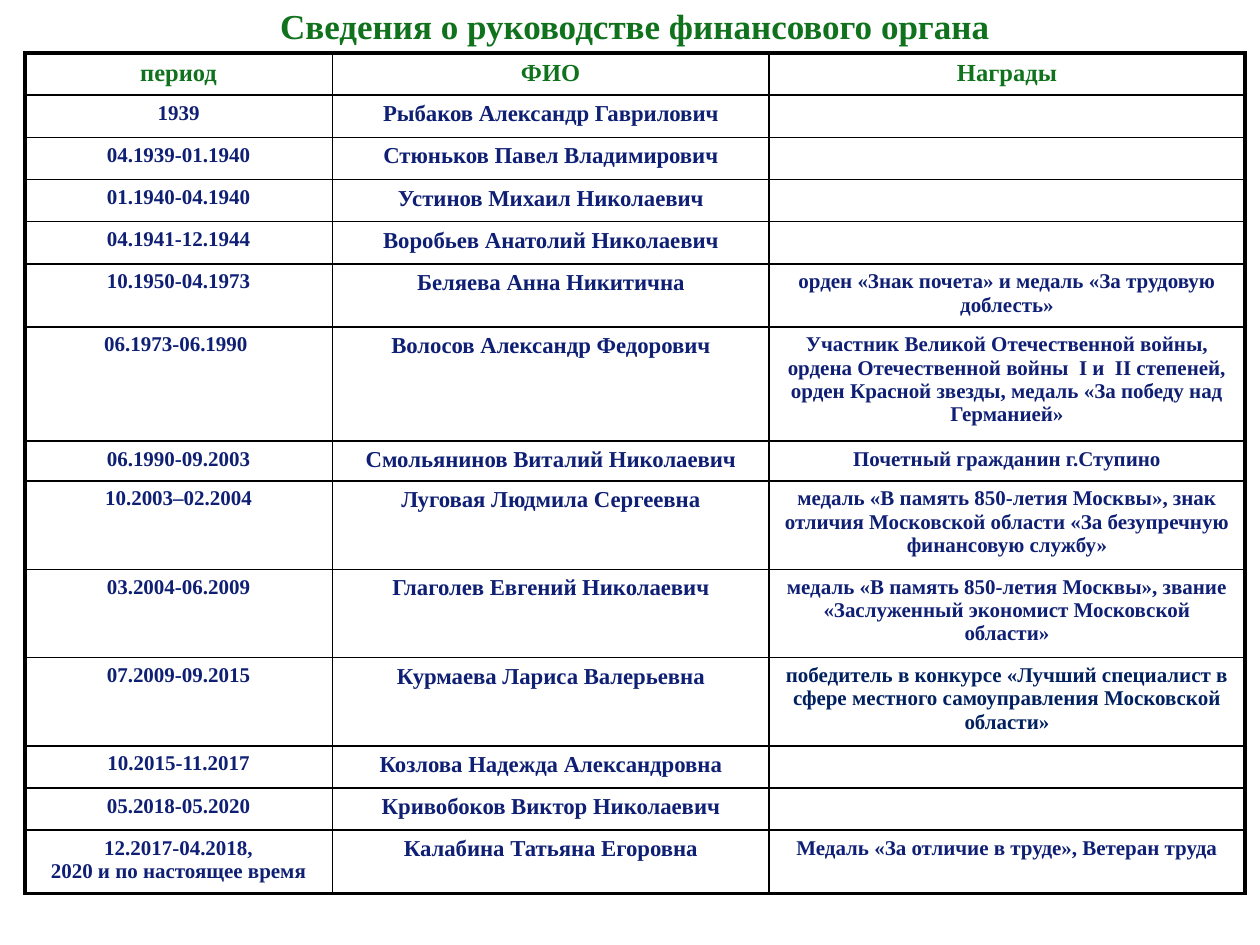
"""Build a slide with a table of the heads of a finance office."""
import lxml.etree
import pptx
import pptx.dml.color
import pptx.enum.text
import pptx.oxml.ns
import pptx.util

Cm = pptx.util.Cm
Pt = pptx.util.Pt
GREEN, NAVY, DARK_BLUE, BLACK = "10721C", "0E1F74", "002060", "000000"
THICK, THIN = Pt(2.25), Pt(1)


def color(value):
    return pptx.dml.color.RGBColor.from_string(value)


def write(paragraph, text, size, value):
    paragraph.alignment = pptx.enum.text.PP_ALIGN.CENTER
    run = paragraph.add_run()
    run.text = text
    text_format = {"name": "Times New Roman", "size": Pt(size), "bold": True}
    for name, setting in text_format.items():
        setattr(run.font, name, setting)
    run.font.color.rgb = color(value)


presentation = pptx.Presentation()
presentation.slide_width = Cm(25.4)
presentation.slide_height = Cm(19.05)
slide = presentation.slides.add_slide(presentation.slide_layouts[6])

title = slide.shapes.add_textbox(Cm(3.3), Cm(-0.05), Cm(19), Cm(1.12))
frame_format = {"word_wrap": True, "vertical_anchor": pptx.enum.text.MSO_ANCHOR.MIDDLE}
for name, setting in frame_format.items():
    setattr(title.text_frame, name, setting)
write(title.text_frame.paragraphs[0], "Сведения о руководстве финансового органа", 20, GREEN)

rows = [
    (0.85, "период", "ФИО", "Награды"),
    (0.85, "1939", "Рыбаков Александр Гаврилович", ""),
    (0.85, "04.1939-01.1940", "Стюньков Павел Владимирович", ""),
    (0.85, "01.1940-04.1940", "Устинов Михаил Николаевич", ""),
    (0.85, "04.1941-12.1944", "Воробьев Анатолий Николаевич", ""),
    (1.27, "10.1950-04.1973", "Беляева Анна Никитична",
     "орден «Знак почета» и медаль «За трудовую доблесть»"),
    (2.3, "06.1973-06.1990 ", "Волосов Александр Федорович",
     "Участник Великой Отечественной войны, ордена Отечественной войны  I и  II степеней, "
     "орден Красной звезды, медаль «За победу над Германией»"),
    (0.8, "06.1990-09.2003", "Смольянинов Виталий Николаевич", "Почетный гражданин г.Ступино"),
    (1.78, "10.2003–02.2004", "Луговая Людмила Сергеевна",
     "медаль «В память 850-летия Москвы», знак отличия Московской области "
     "«За безупречную финансовую службу»"),
    (1.78, "03.2004-06.2009", "Глаголев Евгений Николаевич",
     "медаль «В память 850-летия Москвы», звание «Заслуженный экономист Московской области»"),
    (1.78, "07.2009-09.2015", "Курмаева Лариса Валерьевна",
     "победитель в конкурсе «Лучший специалист в сфере местного самоуправления "
     "Московской области»"),
    (0.85, "10.2015-11.2017", "Козлова Надежда Александровна", ""),
    (0.85, "05.2018-05.2020", "Кривобоков Виктор Николаевич", ""),
    (1.27, "12.2017-04.2018,\n2020 и по настоящее время", "Калабина Татьяна Егоровна",
     "Медаль «За отличие в труде», Ветеран труда"),
]
column_widths = [6.2, 8.8, 9.6]
last_row, last_column = len(rows) - 1, len(column_widths) - 1

table = slide.shapes.add_table(
    len(rows), len(column_widths), Cm(0.5), Cm(1.07),
    Cm(sum(column_widths)), Cm(sum(row[0] for row in rows))).table
for name, setting in {"first_row": False, "horz_banding": False}.items():
    setattr(table, name, setting)
for column, width in zip(table.columns, column_widths):
    column.width = Cm(width)

for row_index, (height, *texts) in enumerate(rows):
    table.rows[row_index].height = Cm(height)
    for column_index, text in enumerate(texts):
        cell = table.cell(row_index, column_index)
        size = 14 if row_index == 0 else 13 if column_index == 1 else 12
        value = GREEN if row_index == 0 else NAVY
        if text.startswith("победитель"):
            value = DARK_BLUE
        for line_index, line in enumerate(text.split("\n")):
            frame = cell.text_frame
            paragraph = frame.add_paragraph() if line_index else frame.paragraphs[0]
            if line:
                write(paragraph, line, size, value)
            else:
                lxml.etree.SubElement(
                    paragraph._p, pptx.oxml.ns.qn("a:endParaRPr"), sz=str(size * 100))

        properties = cell._tc.get_or_add_tcPr()
        outer_edges = {
            "a:lnL": column_index == 0,
            "a:lnR": column_index == last_column,
            "a:lnT": row_index == 0,
            "a:lnB": row_index == last_row,
        }
        for tag, outer in outer_edges.items():
            border = lxml.etree.SubElement(
                properties, pptx.oxml.ns.qn(tag), w=str(int(THICK if outer else THIN)))
            fill = lxml.etree.SubElement(border, pptx.oxml.ns.qn("a:solidFill"))
            lxml.etree.SubElement(fill, pptx.oxml.ns.qn("a:srgbClr"), val=BLACK)
        cell.fill.background()

presentation.save("out.pptx")
